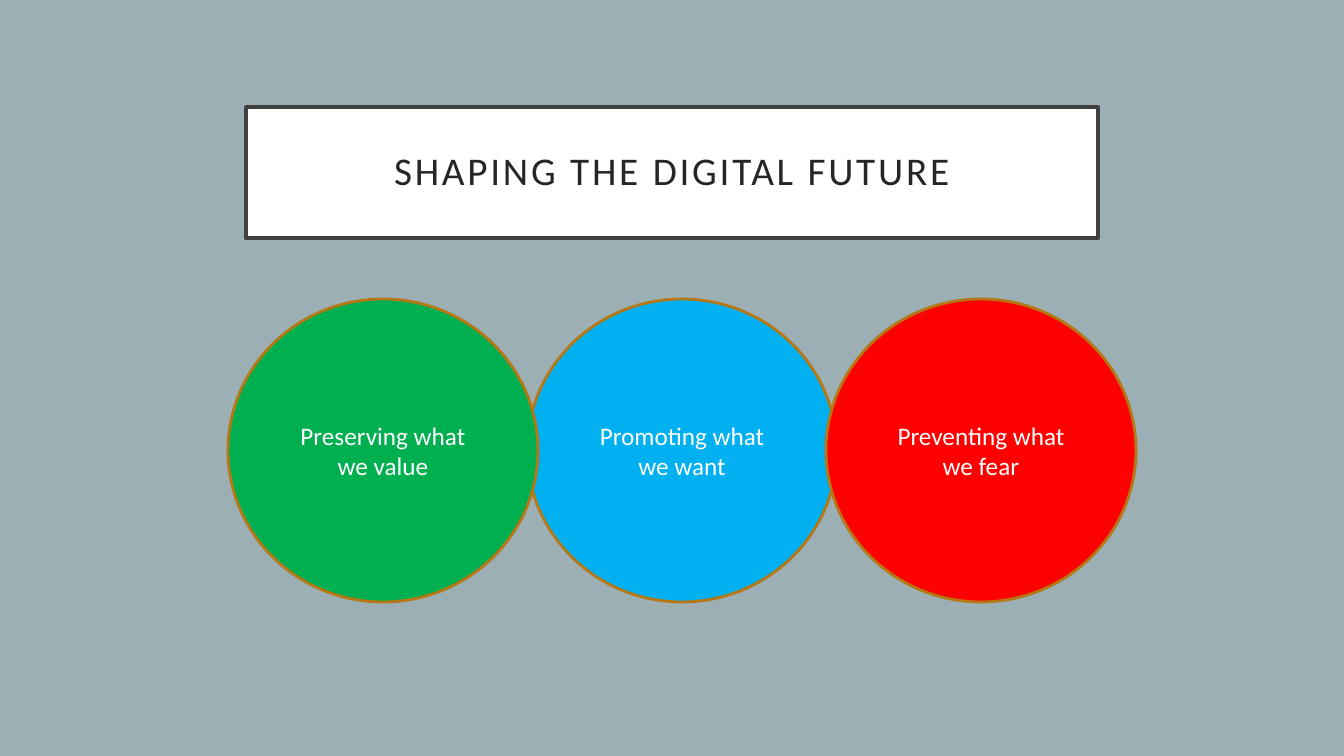
import pptx
import pptx.dml.color
import pptx.enum.shapes
import pptx.enum.text
import pptx.util

# Content
HEADING = "SHAPING THE DIGITAL FUTURE"
# Back to front: (column, wording, fill)
GOALS = [
    (1, "Promoting what we want", "00B0F0"),
    (0, "Preserving what we value", "00B050"),
    (2, "Preventing what we fear", "FF0000"),
]

# Layout in px
SLIDE_SIZE = (1344, 756)
HEADING_BOX = (246, 107, 852, 131)
HEADING_INSET = 20
FIRST_GOAL = (228, 299)
GOAL_SIZE = (310, 303)
GOAL_STEP = 299
FONT = "Calibri"


def px(length):
    return pptx.util.Emu(round(length * 914400 / 100.8))


def color(hex_code):
    return pptx.dml.color.RGBColor.from_string(hex_code)


def style(shape, fill, line, line_width, text, size, text_color):
    shape.fill.solid()
    shape.fill.fore_color.rgb = color(fill)
    shape.line.color.rgb = color(line)
    shape.line.width = pptx.util.Pt(line_width)
    frame = shape.text_frame
    frame.text = text
    frame.word_wrap = True
    frame.auto_size = pptx.enum.text.MSO_AUTO_SIZE.NONE
    frame.vertical_anchor = pptx.enum.text.MSO_ANCHOR.MIDDLE
    paragraph = frame.paragraphs[0]
    paragraph.alignment = pptx.enum.text.PP_ALIGN.CENTER
    paragraph.font.name = FONT
    paragraph.font.size = pptx.util.Pt(size)
    paragraph.font.color.rgb = color(text_color)
    return frame


def main():
    deck = pptx.Presentation()
    deck.slide_width, deck.slide_height = map(px, SLIDE_SIZE)
    slide = deck.slides.add_slide(deck.slide_layouts[5])
    slide.background.fill.solid()
    slide.background.fill.fore_color.rgb = color("9BAFB5")

    # Framed heading
    heading = slide.shapes.title
    heading.left, heading.top, heading.width, heading.height = map(px, HEADING_BOX)
    frame = style(heading, "FFFFFF", "404040", 2.5, HEADING, 28, "262626")
    frame.margin_left = frame.margin_right = px(HEADING_INSET)
    frame.margin_top = frame.margin_bottom = px(HEADING_INSET)
    frame.paragraphs[0].line_spacing = 0.9
    # Letter spacing in hundredths of a point
    frame.paragraphs[0].runs[0]._r.get_or_add_rPr().set("spc", "200")

    # Overlapping goal circles
    left, top = FIRST_GOAL
    for column, wording, fill in GOALS:
        goal = slide.shapes.add_shape(
            pptx.enum.shapes.MSO_SHAPE.OVAL,
            px(left + column * GOAL_STEP), px(top), *map(px, GOAL_SIZE))
        goal.shadow.inherit = False
        style(goal, fill, "B67815", 2, wording, 18, "FFFFFF")

    deck.save("out.pptx")


if __name__ == "__main__":
    main()
